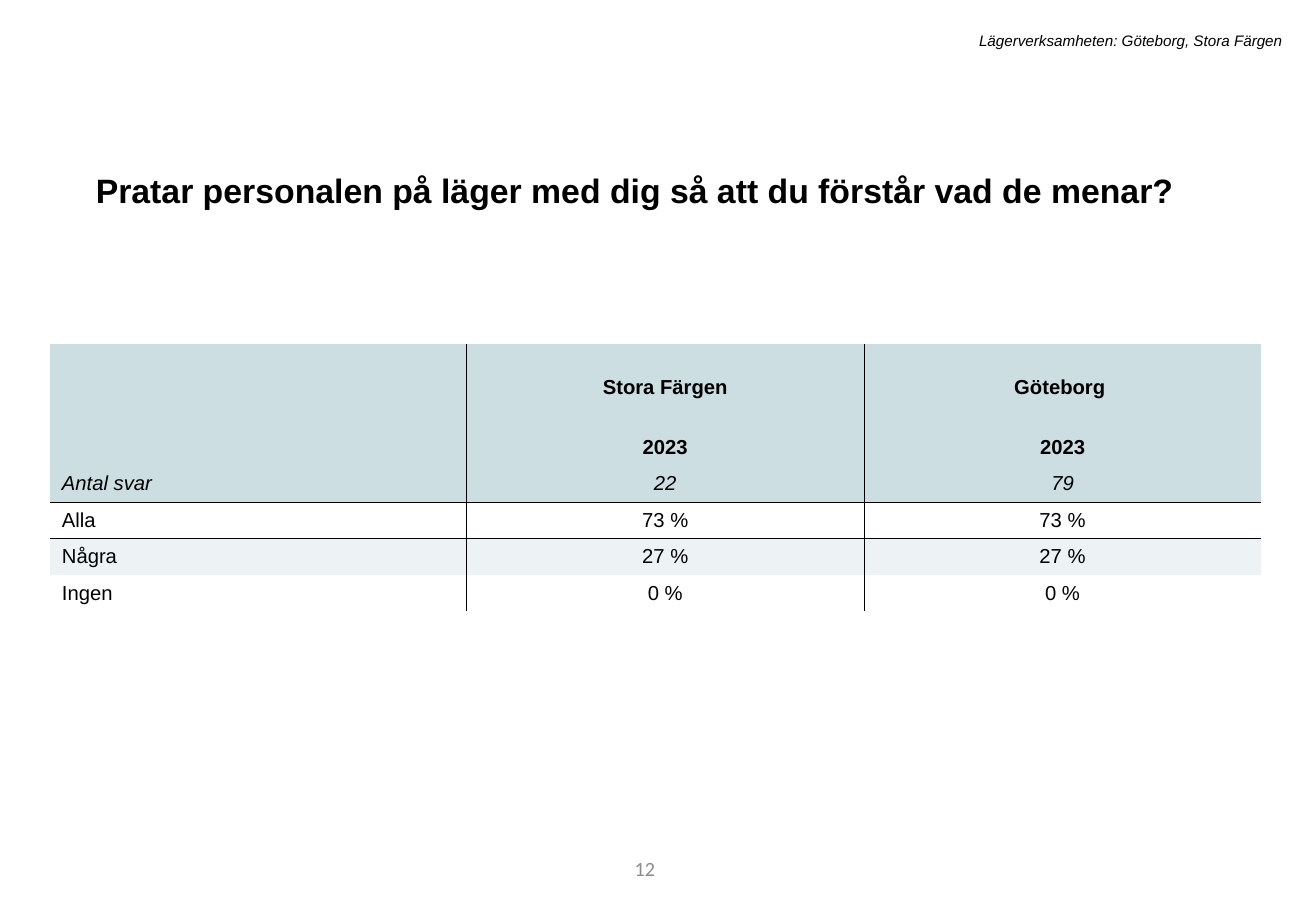
"""Builds the survey slide on whether camp staff speak understandably."""
from lxml import etree
from pptx import Presentation, util as u
from pptx.dml.color import RGBColor
from pptx.enum import text
from pptx.oxml import ns

PX = 9144
COLORS = {"ink": "000000", "muted": "8C8C8C", "head": "CCDEE1", "band": "EDF3F4"}
NO_STYLE = "{2D5ABB26-0587-4C30-8999-92F81FD0307C}"
ALIGN, ANCHOR = text.PP_ALIGN, text.MSO_ANCHOR


def px(n):
    return u.Emu(n * PX)


def write(tf, words, size=12, font="Arial", color="ink", bold=False, italic=False,
          align=ALIGN.LEFT, line=None, before=None):
    p = tf.paragraphs[0]
    p.alignment, p.line_spacing = align, line
    if before:
        p.space_before = u.Pt(before)
    r = p.add_run()
    r.text = words
    r.font.size, r.font.name = u.Pt(size), font
    r.font.bold, r.font.italic = bold, italic
    r.font.color.rgb = RGBColor.from_string(COLORS[color])


class Deck:
    def __init__(self, width, height):
        self.prs = Presentation()
        self.prs.slide_width, self.prs.slide_height = px(width), px(height)
        self.s = self.prs.slides.add_slide(self.prs.slide_layouts[6])

    def label(self, x, y, w, h, words, anchor=ANCHOR.TOP, **style):
        tf = self.s.shapes.add_textbox(px(x), px(y), px(w), px(h)).text_frame
        tf.word_wrap, tf.vertical_anchor = True, anchor
        write(tf, words, **style)

    def border(self, cell, sides):
        tcPr = cell._tc.get_or_add_tcPr()
        for i, side in enumerate(sides):
            ln = etree.Element(ns.qn(f"a:ln{side}"), w=str(u.Pt(0.25)))
            fill = etree.SubElement(ln, ns.qn("a:solidFill"))
            etree.SubElement(fill, ns.qn("a:srgbClr"), val=COLORS["ink"])
            tcPr.insert(i, ln)

    def table(self, x, y, widths, heights, rows, head_rows):
        t = self.s.shapes.add_table(len(rows), len(widths), px(x), px(y),
                                    px(sum(widths)), px(sum(heights))).table
        t.first_row = t.horz_banding = False
        t._tbl.tblPr.find(ns.qn("a:tableStyleId")).text = NO_STYLE
        for col, w in zip(t.columns, widths):
            col.width = px(w)
        for i, (h, (values, fill, style)) in enumerate(zip(heights, rows)):
            t.rows[i].height = px(h)
            for j, value in enumerate(values):
                cell = t.cell(i, j)
                cell.vertical_anchor = ANCHOR.BOTTOM if style.get("bold") else ANCHOR.MIDDLE
                if fill:
                    cell.fill.solid()
                    cell.fill.fore_color.rgb = RGBColor.from_string(COLORS[fill])
                else:
                    cell.fill.background()
                sides = (["L"] if j else []) + (["R"] if j < len(widths) - 1 else [])
                sides += ["T"] if i == head_rows else []
                sides += ["B"] if i == head_rows - 1 else []
                self.border(cell, sides)
                if value:
                    write(cell.text_frame, value,
                          align=ALIGN.CENTER if j else ALIGN.LEFT, **style)


def main():
    d = Deck(1083, 750)
    d.label(305, 695, 244, 40, "12", anchor=ANCHOR.MIDDLE, font="Calibri",
            color="muted", align=ALIGN.RIGHT)
    d.label(69, 128, 940, 47,
            "Pratar personalen på läger med dig så att du förstår vad de menar?",
            size=20, bold=True, line=1.2, before=10)
    d.label(179, 21, 886, 25, "Lägerverksamheten: Göteborg, Stora Färgen",
            size=9, italic=True, align=ALIGN.RIGHT)
    rows = [
        (("", "Stora Färgen", "Göteborg "), "head", {"bold": True}),
        (("", "2023", "2023"), "head", {"bold": True}),
        (("Antal svar", "22", "79"), "head", {"italic": True}),
        (("Alla", "73 %", "73 %"), None, {}),
        (("Några", "27 %", "27 %"), "band", {}),
        (("Ingen", "0 %", "0 %"), None, {}),
    ]
    d.table(41, 283, [343, 327, 327], [50] * 2 + [30] * 4, rows, head_rows=3)
    d.prs.save("out.pptx")


if __name__ == "__main__":
    main()
